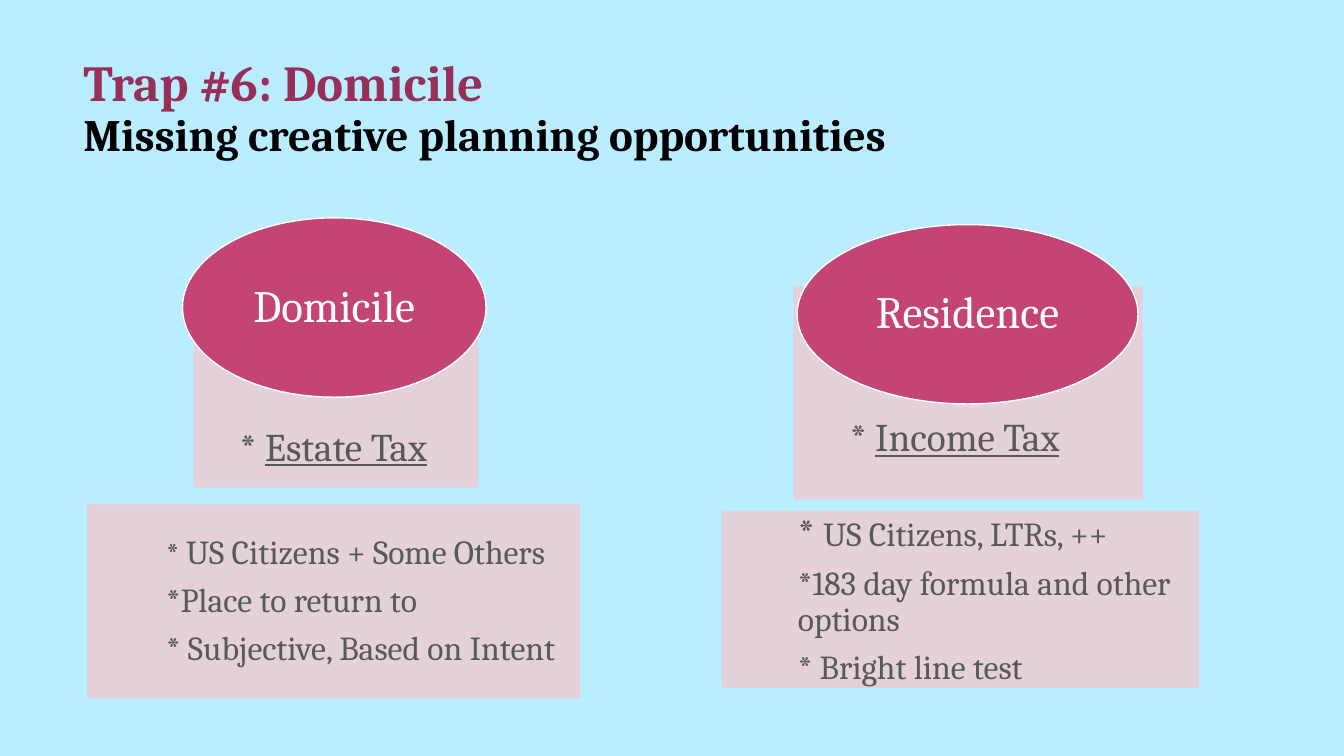
from dataclasses import dataclass

from lxml.etree import SubElement
from pptx import Presentation
from pptx.dml.color import RGBColor
from pptx.enum.shapes import MSO_SHAPE as Shape
from pptx.enum.text import MSO_ANCHOR as Anchor, PP_ALIGN as Align
from pptx.oxml.ns import qn
from pptx.util import Cm, Pt


@dataclass(frozen=True)
class Theme:
    """Colours and type sizes of the slide."""
    font: str = "Cambria"
    sky: str = "B9EDFF"
    panel: str = "EACFD6"
    oval: str = "C44475"
    title: str = "972F57"
    subtitle: str = "000000"
    body: str = "595959"
    white: str = "FFFFFF"
    title_size: int = 36
    heading_size: int = 32
    tax_size: int = 28
    body_size: int = 24
    space_after: float = 8.4
    opacity: int = 90000


THEME = Theme()


def colour(code):
    """Turn a hex code into a colour."""
    return RGBColor.from_string(code)


def style(span, size, code):
    """Set the font of one run."""
    span.font.name = THEME.font
    span.font.size = Pt(size)
    span.font.color.rgb = colour(code)


def add_span(para, text, size, code=THEME.body):
    """Append a styled run to a paragraph."""
    span = para.add_run()
    span.text = text
    style(span, size, code)
    return span


def set_frame(shape, anchor, insets=(0, 0, 0, 0)):
    """Wrap the text of a shape, with insets in cm from left clockwise."""
    frame = shape.text_frame
    frame.word_wrap = True
    frame.vertical_anchor = anchor
    left, top, right, bottom = map(Cm, insets)
    frame.margin_left, frame.margin_top = left, top
    frame.margin_right, frame.margin_bottom = right, bottom
    return frame


def set_para(para, align=Align.LEFT):
    """Apply the common line spacing and alignment."""
    para.alignment = align
    para.line_spacing = 0.9
    return para


def add_solid(page, kind, box, fill, line):
    """Draw a filled and outlined shape in a box given in cm."""
    shape = page.shapes.add_shape(kind, *map(Cm, box))
    shape.shadow.inherit = False
    shape.fill.solid()
    shape.fill.fore_color.rgb = colour(fill)
    shape.line.color.rgb = colour(line)
    shape.line.width = Pt(1)
    return shape


def add_panel(page, box):
    """Draw a slightly transparent pink panel."""
    panel = add_solid(page, Shape.RECTANGLE, box, THEME.panel, THEME.panel)
    for node in panel.fill._xPr.iter(qn("a:srgbClr")):
        SubElement(node, qn("a:alpha"), val=str(THEME.opacity))
    return panel


def add_title(page, box, title, subtitle):
    """Write the two-line title."""
    frame = set_frame(page.shapes.add_textbox(*map(Cm, box)),
                      Anchor.BOTTOM, (0.25, 0.13, 0.25, 0.13))
    para = set_para(frame.paragraphs[0])
    para.text = f"{title}\v{subtitle}"
    looks = ((THEME.title_size, THEME.title), (THEME.heading_size, THEME.subtitle))
    for span, (size, code) in zip(para.runs, looks):
        style(span, size, code)
        span.font.bold = True


def add_tax(page, box, tax, indent, lift):
    """Draw the card that names the tax."""
    frame = set_frame(add_panel(page, box), Anchor.BOTTOM, (indent, 0.43, 0.43, lift))
    para = set_para(frame.paragraphs[0])
    add_span(para, "* ", THEME.tax_size)
    add_span(para, tax, THEME.tax_size).font.underline = True


def add_details(page, box, lines, indent, inset, star_size):
    """Draw the panel of starred details, the first star in its own size."""
    frame = set_frame(add_panel(page, box), Anchor.MIDDLE, (indent, inset, inset, inset))
    for index, line in enumerate(lines):
        para = set_para(frame.add_paragraph() if index else frame.paragraphs[0])
        para.space_after = Pt(THEME.space_after)
        if index == 0:
            add_span(para, "* ", star_size)
            line = line.removeprefix("* ")
        add_span(para, line, THEME.body_size)


def add_oval(page, box, heading):
    """Draw the heading oval."""
    oval = add_solid(page, Shape.OVAL, box, THEME.oval, THEME.white)
    para = set_para(set_frame(oval, Anchor.MIDDLE).paragraphs[0], Align.CENTER)
    add_span(para, heading, THEME.heading_size, THEME.white)


def add_column(page, origin, heading, tax, details):
    """Stack a tax card, a details panel and an oval from the given corner."""
    left, top = origin
    for draw, (x, y, width, height), *content in (
            (add_tax, *tax), (add_details, *details), (add_oval, *heading)):
        draw(page, (left + x, top + y, width, height), *content)


def main():
    """Build and save the slide."""
    deck = Presentation()
    deck.slide_width, deck.slide_height = Cm(33.87), Cm(19.05)
    page = deck.slides.add_slide(deck.slide_layouts[6])
    page.background.fill.solid()
    page.background.fill.fore_color.rgb = colour(THEME.sky)
    add_title(page, (1.85, 0.89, 27.94, 3.3),
              "Trap #6: Domicile ", "Missing creative planning opportunities")
    add_column(
        page, (2.21, 5.49),
        heading=((2.39, 0, 7.65, 4.52), "Domicile"),
        tax=((2.69, 2.26, 7.14, 4.52), "Estate Tax", 1.14, 0.43),
        details=((0, 7.24, 12.4, 4.85),
                 ("* US Citizens + Some Others", "*Place to return to",
                  "* Subjective, Based on Intent"), 1.98, 0.43, 22))
    add_column(
        page, (18.21, 5.66),
        heading=((1.88, 0, 8.59, 4.52), "Residence"),
        tax=((1.81, 1.58, 8.76, 5.33), "Income Tax", 1.4, 0.97),
        details=((0, 7.24, 11.99, 4.42),
                 ("* US Citizens, LTRs, ++", "*183 day formula and other options",
                  "* Bright line test"), 1.9, 0.56, 28))
    deck.save("out.pptx")


if __name__ == "__main__":
    main()
